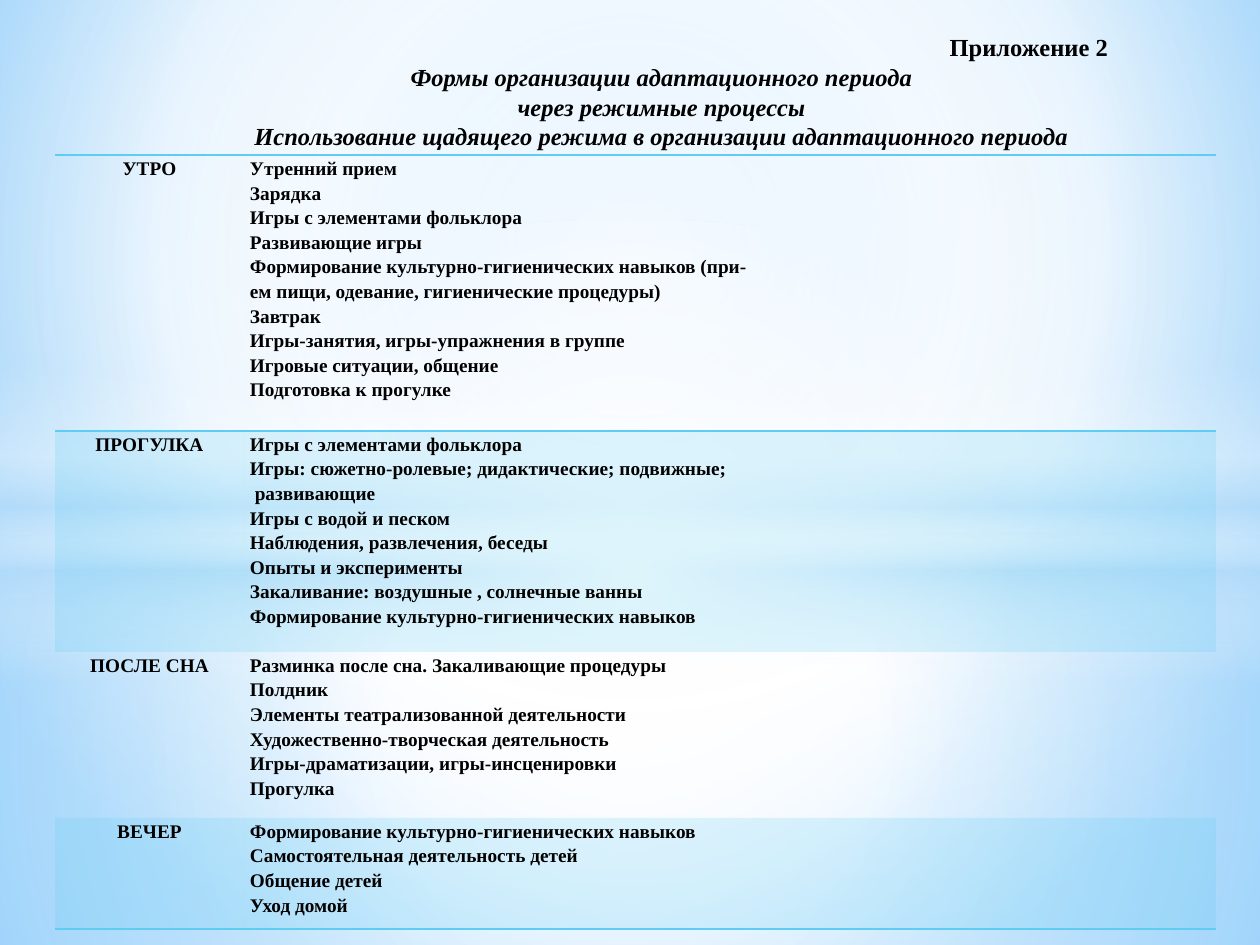
from pptx import Presentation
from pptx import util as u
from pptx.dml.color import RGBColor
from pptx.enum import shapes, text
from pptx.oxml import parse_xml
from pptx.oxml.ns import nsdecls, qn

PX = 914400 / 126
ACCENT = "5ECCF3"
FONT = "Times New Roman"


def paint(node, stops, way=""):
    """Swap the solid fill in node for one colour or for a gradient."""
    tints = [f'<a:srgbClr val="{hue}"><a:alpha val="{alpha * 1000}"/></a:srgbClr>'
             for _, hue, alpha in stops]
    if way:
        marks = "".join(f'<a:gs pos="{stop[0] * 1000}">{tint}</a:gs>'
                        for stop, tint in zip(stops, tints))
        xml = f'<a:gradFill {nsdecls("a")}><a:gsLst>{marks}</a:gsLst>{way}</a:gradFill>'
    else:
        xml = f'<a:solidFill {nsdecls("a")}>{tints[0]}</a:solidFill>'
    old = node.find(".//" + qn("a:solidFill"))
    old.getparent().replace(old, parse_xml(xml))


def write(frame, lines, size=11, align=text.PP_ALIGN.LEFT, gap=1.15, slant=False):
    """Add lines as paragraphs, using the empty first one if there is one."""
    for line in lines:
        para = frame.paragraphs[-1]
        if para.runs:
            para = frame.add_paragraph()
        para.alignment, para.line_spacing = align, gap
        para.space_before = para.space_after = u.Pt(0)
        run = para.add_run()
        run.text = line
        run.font.name, run.font.size = FONT, u.Pt(size)
        run.font.bold, run.font.italic = True, slant
        run.font.color.rgb = RGBColor.from_string("000000")


prs = Presentation()
prs.slide_width, prs.slide_height = u.Inches(10), u.Inches(7.5)
slide = prs.slides.add_slide(prs.slide_layouts[0])
title, sub = slide.placeholders
sub.element.getparent().remove(sub.element)

# Background and its soft light shapes
ring = ('<a:path path="circle"><a:fillToRect l="{}000" t="{}000" r="{}000" b="{}000"/>'
        '</a:path>')
mid = ring.format(50, 50, 50, 50)
slide.background.fill.solid()
paint(slide.element, [(0, "9ED5FF", 100), (60, "FFFFFF", 100), (100, "5BB9FF", 100)],
      ring.format(20, 10, 20, 60))

RECT, OVAL = shapes.MSO_SHAPE.RECTANGLE, shapes.MSO_SHAPE.OVAL
lights = [
    (RECT, 533, 412, mid, [(0, "FFFFFF", 91), (37, "FFFFFF", 76), (100, "B4DCFA", 79)]),
    (RECT, 0, 533, mid, [(0, "FFFFFF", 89), (48, "FFFFFF", 62), (100, "B4DCFA", 79)]),
    (RECT, 365, 315, '<a:lin ang="5400000" scaled="0"/>',
     [(0, "FFFFFF", 0), (29, "FFFFFF", 30), (45, "B4DCFA", 40),
      (55, "FFFFFF", 26), (65, "B4DCFA", 60), (100, "FFFFFF", 0)]),
    (OVAL, 220, 703, mid, [(0, "FFFFFF", 100), (54, "FFFFFF", 0)]),
]
for kind, top, high, way, stops in lights:
    light = slide.shapes.add_shape(kind, 0, int(top * PX), prs.slide_width, int(high * PX))
    light.shadow.inherit = False
    light.line.fill.background()
    light.fill.solid()
    paint(light.element, stops, way)

# Title, in front of the lights
slide.shapes.element.append(title.element)
title.left, title.top, title.width, title.height = (int(n * PX) for n in (74, 26, 1150, 625))
frame = title.text_frame
frame.word_wrap = True
frame.auto_size = text.MSO_AUTO_SIZE.NONE
frame.vertical_anchor = text.MSO_ANCHOR.TOP
write(frame, ["Приложение 2"], size=14, gap=u.Pt(16.9))
write(frame, ["Формы организации адаптационного периода",
              "через режимные процессы",
              "Использование щадящего режима в организации адаптационного периода"],
      size=14, align=text.PP_ALIGN.CENTER, gap=u.Pt(16.9), slant=True)
for i, para in enumerate(frame.paragraphs):
    para.element = para._p.get_or_add_pPr().set("marL", str(int((25 if i else 863) * PX)))

# Day plan table
plan = [
    ("УТРО", 276, [
        "Утренний прием", "Зарядка", "Игры с элементами фольклора", "Развивающие игры",
        "Формирование культурно-гигиенических навыков (при-",
        "ем пищи, одевание, гигиенические процедуры)", "Завтрак",
        "Игры-занятия, игры-упражнения в группе", "Игровые ситуации, общение",
        "Подготовка к прогулке"]),
    ("ПРОГУЛКА", 221, [
        "Игры с элементами фольклора", "Игры: сюжетно-ролевые; дидактические; подвижные;",
        " развивающие", "Игры с водой и песком", "Наблюдения, развлечения, беседы",
        "Опыты и эксперименты", "Закаливание: воздушные , солнечные ванны",
        "Формирование культурно-гигиенических навыков"]),
    ("ПОСЛЕ СНА", 166, [
        "Разминка после сна. Закаливающие процедуры", "Полдник",
        "Элементы театрализованной деятельности", "Художественно-творческая деятельность",
        "Игры-драматизации, игры-инсценировки", "Прогулка"]),
    ("ВЕЧЕР", 111, [
        "Формирование культурно-гигиенических навыков", "Самостоятельная деятельность детей",
        "Общение детей", "Уход домой"]),
]
edges = {0: ("lnT", "lnB"), 3: ("lnB",)}
table = slide.shapes.add_table(len(plan), 2, int(55 * PX), int(155 * PX),
                               int(1161 * PX), int(774 * PX)).table
table.first_row = table.horz_banding = False
style = table._tbl.tblPr.find(qn("a:tableStyleId"))
style.text = "{2D5ABB26-0587-4C30-8999-92F81FD0307C}"
for col, wide in zip(table.columns, (189, 972)):
    col.width = int(wide * PX)

for i, (part, high, tasks) in enumerate(plan):
    table.rows[i].height = int(high * PX)
    for j, lines in enumerate(([part], tasks)):
        cell = table.cell(i, j)
        cell.margin_left = cell.margin_right = int(6 * PX)
        cell.margin_top = cell.margin_bottom = 0
        write(cell.text_frame, lines,
              align=text.PP_ALIGN.LEFT if j else text.PP_ALIGN.CENTER)
        props = cell._tc.get_or_add_tcPr()
        if i % 2:
            cell.fill.solid()
            paint(props, [(0, ACCENT, 20)])
        else:
            cell.fill.background()
        for k, edge in enumerate(edges.get(i, ())):
            props.insert(k, parse_xml(
                f'<a:{edge} {nsdecls("a")} w="12700"><a:solidFill>'
                f'<a:srgbClr val="{ACCENT}"/></a:solidFill></a:{edge}>'))

prs.save("out.pptx")
